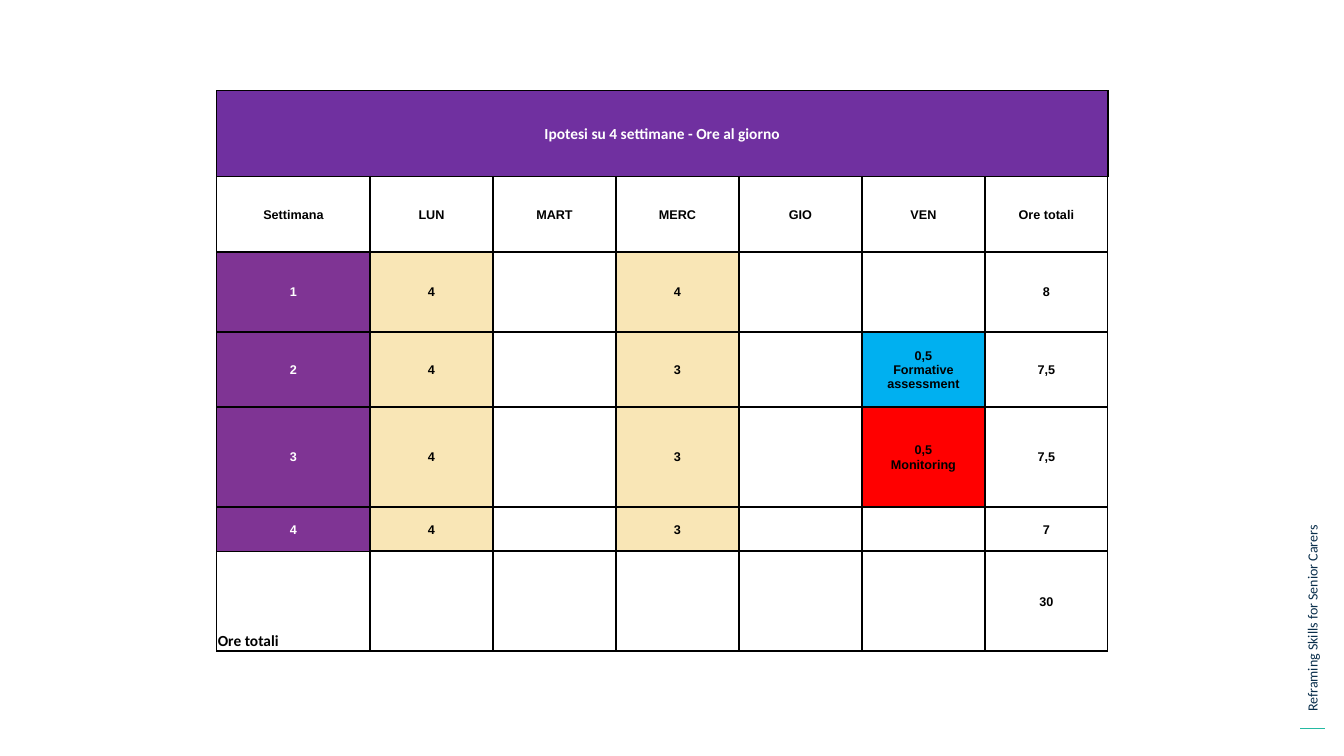
from lxml import etree
from pptx import Presentation
from pptx.dml.color import RGBColor
from pptx.enum.shapes import MSO_CONNECTOR
from pptx.enum.text import MSO_ANCHOR, PP_ALIGN
from pptx.oxml.ns import qn
from pptx.util import Inches, Pt

CENTER, LEFT = PP_ALIGN.CENTER, PP_ALIGN.LEFT
MIDDLE, BOTTOM = MSO_ANCHOR.MIDDLE, MSO_ANCHOR.BOTTOM

THEME = {
    "black": "000000", "white": "FFFFFF", "navy": "092E4B", "teal": "24BAA2",
    "title": "7030A0", "week": "7F3494", "lesson": "F9E6B6",
    "assessment": "00B0F0", "monitoring": "FF0000",
    "heading_font": "Calibri", "cell_font": "Arial",
    "heading_size": 11, "side_size": 10, "cell_size": 9,
    "thin": 1, "thick": 1.5,
}


def write(paragraph, text, font, size, color, bold):
    run = paragraph.add_run()
    run.text = text
    formats = {"name": THEME[font], "size": Pt(THEME[size]), "bold": bold}
    for attribute, value in formats.items():
        setattr(run.font, attribute, value)
    run.font.color.rgb = RGBColor.from_string(THEME[color])


def add_border(cell, tag, width):
    border = etree.SubElement(cell._tc.get_or_add_tcPr(), qn(tag), w=str(Pt(width)))
    fill = etree.SubElement(border, qn("a:solidFill"))
    etree.SubElement(fill, qn("a:srgbClr"), val=THEME["black"])


presentation = Presentation()
presentation.slide_width = Inches(13.33)
presentation.slide_height = Inches(7.5)
slide = presentation.slides.add_slide(presentation.slide_layouts[6])

# Vertical project name and accent line
side_label = slide.shapes.add_textbox(Inches(11.28), Inches(5.29), Inches(3.47), Inches(0.27))
side_label.rotation = 270
side_label.text_frame.word_wrap = True
write(side_label.text_frame.paragraphs[0], "Reframing Skills for Senior Carers",
      "heading_font", "side_size", "navy", False)

accent = slide.shapes.add_connector(
    MSO_CONNECTOR.STRAIGHT, Inches(13.14), Inches(7.23), Inches(12.89), Inches(7.23))
accent.line.color.rgb = RGBColor.from_string(THEME["teal"])
accent.line.width = Pt(0.75)
etree.SubElement(accent._element.spPr, qn("a:effectLst"))

# Timetable contents
rows = [
    ["Ipotesi su 4 settimane - Ore al giorno", "", "", "", "", "", ""],
    ["Settimana", "LUN", "MART", "MERC", "GIO", "VEN", "Ore totali"],
    ["1", "4", "", "4", "", "", "8"],
    ["2", "4", "", "3", "", "0,5\nFormative assessment", "7,5"],
    ["3", "4", "", "3", "", "0,5\nMonitoring", "7,5"],
    ["4", "4", "", "3", "", "", "7"],
    ["Ore totali", "", "", "", "", "", "30"],
]
column_widths = [1.52] + [1.22] * 6
row_heights = [0.85, 0.75, 0.79, 0.75, 0.99, 0.44, 0.99]
last_row, last_column = len(rows) - 1, len(column_widths) - 1

fills = {(0, 0): "title", (3, 5): "assessment", (4, 5): "monitoring"}
for week_row in range(2, last_row):
    fills.update({(week_row, 0): "week", (week_row, 1): "lesson", (week_row, 3): "lesson"})

# Thin edges: outer frame, below the title, around the totals label
thin_edges = {("a:lnL", None, 0), ("a:lnR", None, last_column),
              ("a:lnT", 0, None), ("a:lnB", 0, None), ("a:lnT", 1, None),
              ("a:lnB", last_row, None), ("a:lnT", last_row, 0), ("a:lnR", last_row, 0),
              ("a:lnL", last_row, 1), ("a:lnB", last_row - 1, 0)}

# Timetable
table = slide.shapes.add_table(
    len(rows), len(column_widths), Inches(2.15), Inches(0.9),
    Inches(sum(column_widths)), Inches(sum(row_heights))).table
table.horz_banding = False
table.first_row = False
for column, width in zip(table.columns, column_widths):
    column.width = Inches(width)
for row, height in zip(table.rows, row_heights):
    row.height = Inches(height)
table.cell(0, 0).merge(table.cell(0, last_column))

for r, texts in enumerate(rows):
    for c, text in enumerate(texts):
        cell = table.cell(r, c)
        is_total_label = (r, c) == (last_row, 0)
        is_heading = r == 0 or is_total_label
        fill_name = fills.get((r, c), "white")
        cell_formats = {
            "margin_left": Inches(0.01), "margin_right": Inches(0.01),
            "margin_top": Inches(0.01), "margin_bottom": 0,
            "vertical_anchor": BOTTOM if is_total_label else MIDDLE,
        }
        for attribute, value in cell_formats.items():
            setattr(cell, attribute, value)

        for tag in ("a:lnL", "a:lnR", "a:lnT", "a:lnB"):
            is_thin = thin_edges & {(tag, r, c), (tag, r, None), (tag, None, c)}
            add_border(cell, tag, THEME["thin" if is_thin else "thick"])
        cell.fill.solid()
        cell.fill.fore_color.rgb = RGBColor.from_string(THEME[fill_name])

        if not text:
            continue
        for i, line in enumerate(text.split("\n")):
            frame = cell.text_frame
            paragraph = frame.add_paragraph() if i else frame.paragraphs[0]
            paragraph.alignment = LEFT if is_total_label else CENTER
            write(paragraph, line,
                  "heading_font" if is_heading else "cell_font",
                  "heading_size" if is_heading else "cell_size",
                  "white" if fill_name in ("title", "week") else "black", True)

presentation.save("out.pptx")
